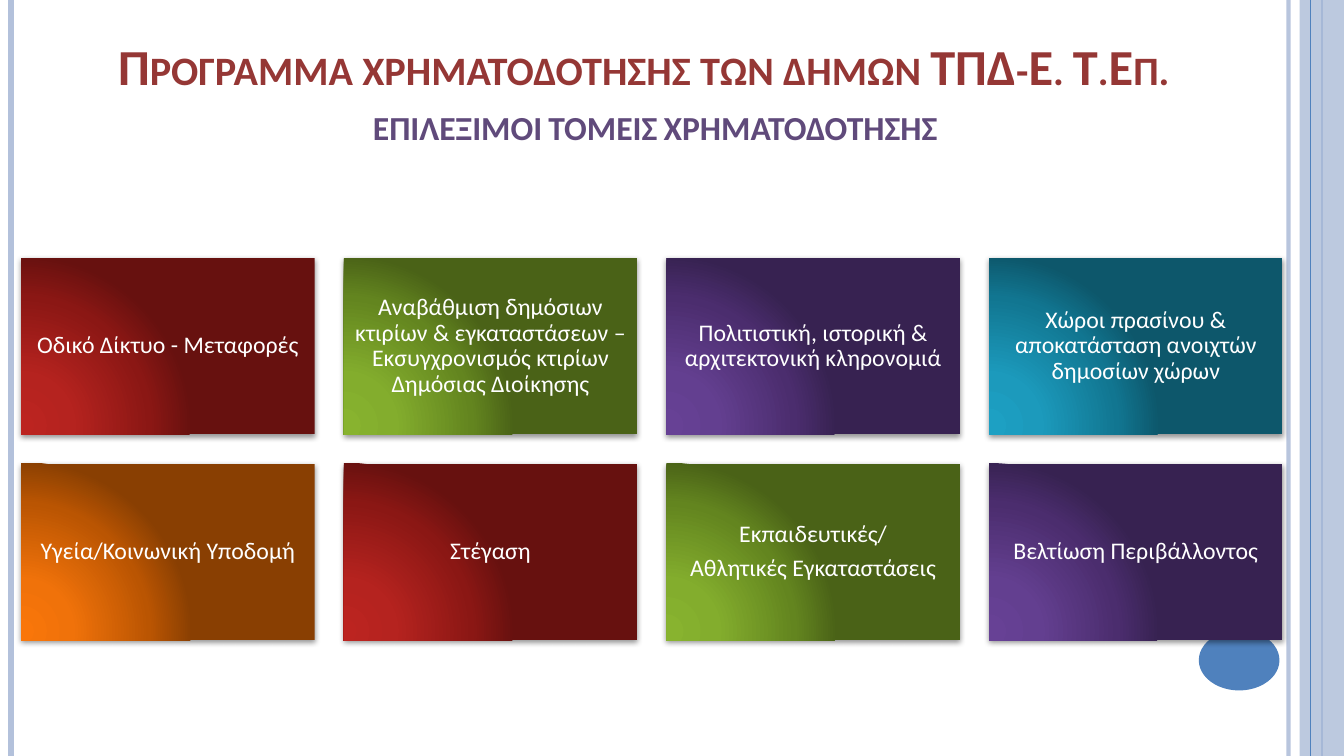
from lxml import etree
from pptx import Presentation
from pptx import util as u
from pptx.dml.color import RGBColor
from pptx.enum import shapes, text
from pptx.oxml import parse_xml
from pptx.oxml.ns import nsdecls, qn

WIDTH, HEIGHT = 13.33, 7.5
COLOURS = {"rail": "B3C1DB", "accent": "4F81BD", "title": "953735",
           "subtitle": "604A7B", "white": "FFFFFF"}
GRADIENTS = {
    "red": ("BC2420", "B5231F", "8B1714", "67110F"),
    "green": ("88B32F", "83AD2D", "63851F", "4A6217"),
    "purple": ("674195", "633F90", "4B2D6E", "372251"),
    "teal": ("1DA0C3", "1C9ABC", "117691", "0D576B"),
    "orange": ("F9760A", "F0720A", "BA5502", "893F02"),
}
STOPS = (0, 30, 75, 100)
LEFT, TOP, COLUMN, ROW = 0.21, 2.56, 3.2, 2.04
TILE_W, TILE_H, COLUMNS = 2.91, 1.75, 4
SECTORS = [
    ("red", "Οδικό Δίκτυο - Μεταφορές"),
    ("green", "Αναβάθμιση δημόσιων κτιρίων & εγκαταστάσεων – "
              "Εκσυγχρονισμός κτιρίων Δημόσιας Διοίκησης"),
    ("purple", "Πολιτιστική, ιστορική & αρχιτεκτονική κληρονομιά"),
    ("teal", "Χώροι πρασίνου & αποκατάσταση ανοιχτών δημοσίων χώρων"),
    ("orange", "Υγεία/Κοινωνική Υποδομή"),
    ("red", "Στέγαση"),
    ("green", "Εκπαιδευτικές/\nΑθλητικές Εγκαταστάσεις"),
    ("purple", "Βελτίωση Περιβάλλοντος"),
]


def colour(name):
    return RGBColor.from_string(COLOURS[name])


def inches(*lengths):
    return [u.Inches(n) for n in lengths]


def set_attrs(obj, values):
    for name, value in values.items():
        setattr(obj, name, value)


def set_alpha(fill_parent, percent):
    """Make the solid colour inside an element partly transparent."""
    clr = next(fill_parent.iter(qn("a:srgbClr")))
    etree.SubElement(clr, qn("a:alpha")).set("val", str(percent * 1000))


def add_rail(s, x, name, width, alpha=100):
    """Draw a vertical line over the full slide height."""
    c = s.shapes.add_connector(shapes.MSO_CONNECTOR.STRAIGHT,
                               *inches(x, 0, x, HEIGHT))
    c.line.color.rgb = colour(name)
    c.line.width = u.Pt(width)
    spPr = c._element.spPr
    etree.SubElement(spPr, qn("a:effectLst"))
    if alpha < 100:
        set_alpha(spPr, alpha)


def add_plain(s, kind, box):
    sp = s.shapes.add_shape(kind, *inches(*box))
    sp.shadow.inherit = False
    sp.line.fill.background()
    return sp


def add_decor(s, kind, box, name):
    sp = add_plain(s, kind, box)
    sp.fill.solid()
    sp.fill.fore_color.rgb = colour(name)
    return sp


def write_text(tf, content, font, para):
    for i, line in enumerate(content.split("\n")):
        p = tf.paragraphs[0] if i == 0 else tf.add_paragraph()
        set_attrs(p, para)
        r = p.add_run()
        r.text = line
        set_attrs(r.font, {"name": "Calibri", "size": u.Pt(font["size"]),
                           "bold": font.get("bold", False)})
        r.font.color.rgb = colour(font["colour"])
        if font.get("small_caps"):
            r._r.get_or_add_rPr().set("cap", "small")


def add_glow(sp, hues):
    """Fill with a radial gradient from the lower left, and add a soft shadow."""
    stops = "".join(f'<a:gs pos="{pos * 1000}"><a:srgbClr val="{hue}"/></a:gs>'
                    for pos, hue in zip(STOPS, hues))
    spPr = sp._element.spPr
    spPr.find(qn("a:ln")).addprevious(parse_xml(
        f'<a:gradFill {nsdecls("a")} rotWithShape="1"><a:gsLst>{stops}</a:gsLst>'
        '<a:path path="circle"><a:fillToRect l="5000" t="100000" r="120000" '
        'b="10000"/></a:path></a:gradFill>'))
    spPr.find(qn("a:effectLst")).append(parse_xml(
        f'<a:outerShdw {nsdecls("a")} blurRad="{u.Pt(4)}" dist="{u.Pt(1.6)}" '
        'dir="5400000" rotWithShape="0"><a:srgbClr val="000000">'
        '<a:alpha val="42000"/></a:srgbClr></a:outerShdw>'))


def add_sector(s, index, hue, label):
    row, col = divmod(index, COLUMNS)
    sp = add_plain(s, shapes.MSO_SHAPE.RECTANGLE,
                   (LEFT + col * COLUMN, TOP + row * ROW, TILE_W, TILE_H))
    add_glow(sp, GRADIENTS[hue])
    tf = sp.text_frame
    margins = ("margin_left", "margin_top", "margin_right", "margin_bottom")
    set_attrs(tf, dict.fromkeys(margins, u.Inches(0.07)))
    set_attrs(tf, {"word_wrap": True,
                   "vertical_anchor": text.MSO_ANCHOR.MIDDLE})
    write_text(tf, label, {"size": 17, "colour": "white"},
               {"alignment": text.PP_ALIGN.CENTER, "line_spacing": 0.9,
                "space_after": u.Pt(6)})


def add_title(s, content):
    sp = s.shapes.title
    set_attrs(sp, dict(zip(("left", "top", "width", "height"),
                           inches(0.69, 0.18, 11.39, 0.82))))
    set_attrs(sp.text_frame, {"vertical_anchor": text.MSO_ANCHOR.BOTTOM,
                              "auto_size": text.MSO_AUTO_SIZE.NONE})
    write_text(sp.text_frame, content,
               {"size": 36, "colour": "title", "bold": True, "small_caps": True},
               {"alignment": text.PP_ALIGN.CENTER})


def add_subtitle(s, content):
    tf = s.shapes.add_textbox(*inches(3.6, 1.01, 5.89, 0.5)).text_frame
    set_attrs(tf, {"word_wrap": False,
                   "auto_size": text.MSO_AUTO_SIZE.SHAPE_TO_FIT_TEXT})
    write_text(tf, content,
               {"size": 24, "colour": "subtitle", "bold": True,
                "small_caps": True}, {})


def add_frame(s):
    add_rail(s, 12.78, "rail", 3, alpha=93)
    add_rail(s, 0.11, "rail", 4.5)
    add_rail(s, 13.11, "accent", 1.5)
    band = add_decor(s, shapes.MSO_SHAPE.RECTANGLE,
                     (12.89, 0, WIDTH - 12.89, HEIGHT), "rail")
    set_alpha(band._element.spPr, 87)
    add_rail(s, 13, "accent", 0.75)
    add_decor(s, shapes.MSO_SHAPE.OVAL, (11.89, 6.25, 0.8, 0.6), "accent")


def main():
    prs = Presentation()
    prs.slide_width, prs.slide_height = inches(WIDTH, HEIGHT)
    s = prs.slides.add_slide(prs.slide_layouts[5])
    add_frame(s)
    add_title(s, "Πρόγραμμα χρηματοδότησης των δήμων ΤΠΔ-Ε. Τ.Επ.")
    for index, (hue, label) in enumerate(SECTORS):
        add_sector(s, index, hue, label)
    add_subtitle(s, "ΕΠΙΛΕΞΙΜΟΙ ΤΟΜΕΙΣ ΧΡΗΜΑΤΟΔΟΤΗΣΗΣ")
    prs.save("out.pptx")


if __name__ == "__main__":
    main()
